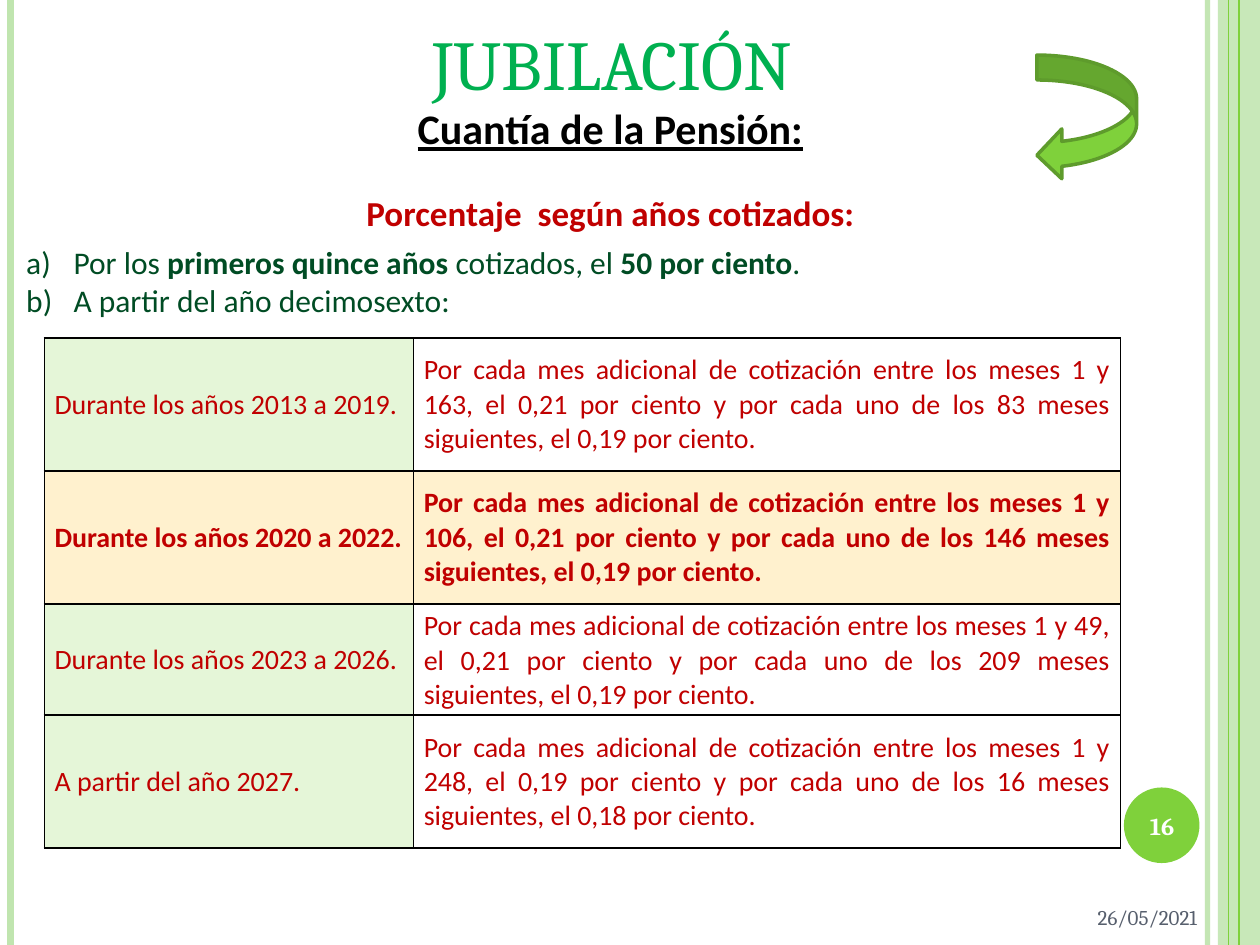
from lxml import etree
from pptx import Presentation
from pptx.dml.color import RGBColor
from pptx.enum.shapes import MSO_CONNECTOR, MSO_SHAPE
from pptx.enum.text import MSO_ANCHOR, MSO_AUTO_SIZE, PP_ALIGN
from pptx.oxml.ns import qn
from pptx.util import Pt

STRAIGHT = MSO_CONNECTOR.STRAIGHT
RECTANGLE, OVAL, CURVED_ARROW = MSO_SHAPE.RECTANGLE, MSO_SHAPE.OVAL, MSO_SHAPE.CURVED_LEFT_ARROW
LEFT, CENTER, RIGHT, JUSTIFY = PP_ALIGN.LEFT, PP_ALIGN.CENTER, PP_ALIGN.RIGHT, PP_ALIGN.JUSTIFY
TOP, MIDDLE, BOTTOM = MSO_ANCHOR.TOP, MSO_ANCHOR.MIDDLE, MSO_ANCHOR.BOTTOM
NO_AUTOFIT = MSO_AUTO_SIZE.NONE

BLACK = RGBColor(0x00, 0x00, 0x00)
WHITE = RGBColor(0xFF, 0xFF, 0xFF)
GRAY = RGBColor(0x57, 0x5F, 0x6D)
RED = RGBColor(0xC0, 0x00, 0x00)
GREEN = RGBColor(0x7F, 0xD1, 0x3B)
PALE_GREEN = RGBColor(0xC0, 0xE5, 0xAF)
OUTLINE_GREEN = RGBColor(0x5E, 0x9B, 0x2C)
TITLE_GREEN = RGBColor(0x00, 0xB0, 0x50)
DARK_GREEN = RGBColor(0x00, 0x4C, 0x24)
PERIOD_FILL = RGBColor(0xE5, 0xF6, 0xD8)
CURRENT_FILL = RGBColor(0xFF, 0xF1, 0xCE)


def style_font(font, name, size, color, bold=False):
    font.name = name
    font.size = Pt(size)
    font.color.rgb = color
    font.bold = bold


def set_alpha(element, percent):
    """Make the solid colour inside a fill or line element partly transparent."""
    color = element.find(".//" + qn("a:srgbClr"))
    etree.SubElement(color, qn("a:alpha"), val=str(percent * 1000))


presentation = Presentation()
presentation.slide_width = Pt(720)
presentation.slide_height = Pt(540)
slide = presentation.slides.add_slide(presentation.slide_layouts[5])
shapes = slide.shapes

# Side stripes
band = shapes.add_shape(RECTANGLE, Pt(696), Pt(0), Pt(24), Pt(540))
band.shadow.inherit = False
band.fill.solid()
band.fill.fore_color.rgb = PALE_GREEN
band.line.fill.background()
set_alpha(band._element.spPr, 87)

for x, color, width, alpha in [
    (690, PALE_GREEN, 3, 93),
    (6, PALE_GREEN, 4.5, 100),
    (708, GREEN, 1.5, 100),
    (702, GREEN, 0.75, 100),
]:
    stripe = shapes.add_connector(STRAIGHT, Pt(x), Pt(0), Pt(x), Pt(540))
    stripe.line.color.rgb = color
    stripe.line.width = Pt(width)
    if alpha < 100:
        set_alpha(stripe._element.spPr, alpha)
    etree.SubElement(stripe._element.spPr, qn("a:effectLst"))

# Page number disc and curved arrow
for kind, left, top, width, height, outline in [
    (OVAL, 642.25, 450, 43.2, 43.2, None),
    (CURVED_ARROW, 592.5, 31.5, 57, 71.5, OUTLINE_GREEN),
]:
    shape = shapes.add_shape(kind, Pt(left), Pt(top), Pt(width), Pt(height))
    shape.shadow.inherit = False
    shape.fill.solid()
    shape.fill.fore_color.rgb = GREEN
    if outline is None:
        shape.line.fill.background()
    else:
        shape.line.color.rgb = outline
        shape.line.width = Pt(2)

# Title
title = shapes.title
title.left, title.top, title.width, title.height = Pt(0), Pt(-25), Pt(700), Pt(90.5)
title.text_frame.text = "jubilación"
title.text_frame.auto_size = NO_AUTOFIT
title.text_frame.vertical_anchor = BOTTOM
paragraph = title.text_frame.paragraphs[0]
paragraph.alignment = CENTER
style_font(paragraph.runs[0].font, "Cambria", 50, TITLE_GREEN)
paragraph.runs[0].font._element.set("cap", "small")

# Single-line texts
text_boxes = {}
for text, left, top, width, height, alignment, anchor, name, size, color, bold in [
    ("Cuantía de la Pensión:", 8.6, 51, 680.4, 43.2, CENTER, TOP, "Calibri", 24, BLACK, True),
    ("Porcentaje  según años cotizados:", 8.6, 105.8, 680.4, 31.7, CENTER, MIDDLE,
     "Calibri", 20, RED, True),
    ("26/05/2021", 532.8, 509, 158.4, 30.2, RIGHT, MIDDLE, "Cambria", 12, GRAY, False),
    ("16", 640, 451.4, 48.2, 41, CENTER, MIDDLE, "Cambria", 14, WHITE, True),
]:
    box = shapes.add_textbox(Pt(left), Pt(top), Pt(width), Pt(height))
    box.text_frame.word_wrap = True
    box.text_frame.vertical_anchor = anchor
    box.text_frame.text = text
    paragraph = box.text_frame.paragraphs[0]
    paragraph.alignment = alignment
    style_font(paragraph.runs[0].font, name, size, color, bold)
    text_boxes[text] = paragraph

subtitle = text_boxes["Cuantía de la Pensión:"]
subtitle.line_spacing = 1.15
subtitle.space_after = Pt(10)
subtitle.runs[0].font.underline = True

# Lettered list: (text, bold) runs
rules = [
    [("Por los ", False), ("primeros quince años ", True), ("cotizados, el ", False),
     ("50 por ciento", True), (".", False)],
    [("A partir del año decimosexto:", False)],
]
rule_box = shapes.add_textbox(Pt(7.9), Pt(135.4), Pt(680.4), Pt(51))
rule_frame = rule_box.text_frame
rule_frame.word_wrap = True
for index, rule in enumerate(rules):
    paragraph = rule_frame.add_paragraph() if index else rule_frame.paragraphs[0]
    properties = paragraph._p.get_or_add_pPr()
    properties.set("marL", str(Pt(27)))
    properties.set("indent", str(Pt(-27)))
    etree.SubElement(properties, qn("a:buFont"), typeface="+mj-lt")
    etree.SubElement(properties, qn("a:buAutoNum"), type="alphaLcParenR")
    for text, bold in rule:
        run = paragraph.add_run()
        run.text = text
        style_font(run.font, "Calibri", 18, DARK_GREEN, bold)

# Table: period, first block of months, its rate, second block, its rate, row height
periods = [
    ("Durante los años 2013 a 2019.", "163", "0,21", "83", "0,19", 76),
    ("Durante los años 2020 a 2022.", "106", "0,21", "146", "0,19", 76),
    ("Durante los años 2023 a 2026.", "49", "0,21", "209", "0,19", 63.5),
    ("A partir del año 2027.", "248", "0,19", "16", "0,18", 76),
]
CURRENT_ROW = 1
table_frame = shapes.add_table(len(periods), 2, Pt(25.4), Pt(193.2), Pt(614.9), Pt(291.5))
table = table_frame.table
table.first_row = False
table.horz_banding = False
table.columns[0].width = Pt(211)
table.columns[1].width = Pt(403.9)

for row, (period, months, rate, more_months, more_rate, height) in enumerate(periods):
    table.rows[row].height = Pt(height)
    current = row == CURRENT_ROW
    detail = (f"Por cada mes adicional de cotización entre los meses 1 y {months}, "
              f"el {rate} por ciento y por cada uno de los {more_months} meses "
              f"siguientes, el {more_rate} por ciento.")
    for column, (text, alignment, fill) in enumerate([
        (period, LEFT, PERIOD_FILL),
        (detail, JUSTIFY, WHITE),
    ]):
        cell = table.cell(row, column)
        cell.text_frame.text = text
        cell.vertical_anchor = MIDDLE
        cell.margin_left = cell.margin_right = Pt(5.8)
        cell.margin_top = cell.margin_bottom = Pt(2.9)
        paragraph = cell.text_frame.paragraphs[0]
        paragraph.alignment = alignment
        style_font(paragraph.runs[0].font, "Calibri", 16, RED, current)
        for side in ("a:lnL", "a:lnR", "a:lnT", "a:lnB"):
            border = etree.SubElement(cell._tc.get_or_add_tcPr(), qn(side), w=str(Pt(1)))
            border_fill = etree.SubElement(border, qn("a:solidFill"))
            etree.SubElement(border_fill, qn("a:srgbClr"), val=str(BLACK))
        cell.fill.solid()
        cell.fill.fore_color.rgb = CURRENT_FILL if current else fill

presentation.save("out.pptx")
